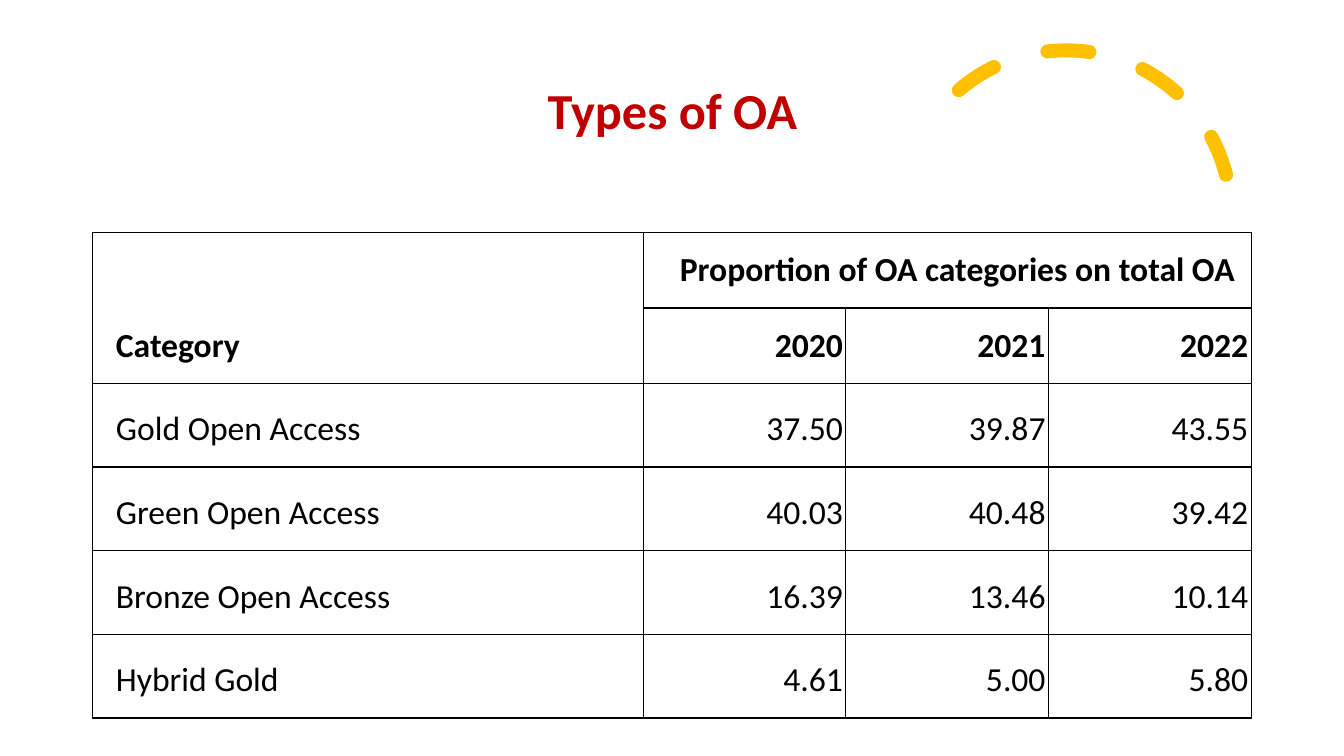
from dataclasses import dataclass

from lxml import etree
from pptx import Presentation
from pptx.dml.color import RGBColor
from pptx.enum.dml import MSO_LINE
from pptx.enum.shapes import MSO_SHAPE
from pptx.enum.text import MSO_ANCHOR, PP_ALIGN
from pptx.oxml.ns import qn
from pptx.util import Pt

PX = 9144  # 100 px to the inch
FONT = "Calibri"
RED = RGBColor(0xC0, 0x00, 0x00)
AMBER = RGBColor(0xFF, 0xC0, 0x00)
BLACK = RGBColor(0x00, 0x00, 0x00)
LEFT, CENTER, RIGHT = PP_ALIGN.LEFT, PP_ALIGN.CENTER, PP_ALIGN.RIGHT
MIDDLE, BOTTOM = MSO_ANCHOR.MIDDLE, MSO_ANCHOR.BOTTOM
DASH, ARC = MSO_LINE.DASH, MSO_SHAPE.ARC


@dataclass(frozen=True)
class Box:
    left: int
    top: int
    width: int
    height: int

    def emu(self) -> tuple[int, ...]:
        return tuple(v * PX for v in (self.left, self.top, self.width, self.height))


@dataclass(frozen=True)
class Category:
    name: str
    shares: tuple[str, str, str]


TITLE_BOX = Box(92, 40, 1150, 145)
ARC_BOX = Box(894, 50, 327, 327)
TABLE_BOX = Box(92, 231, 1150, 481)
COL_WIDTHS = (546, 201, 201, 201)
HEAD_HEIGHT, ROW_HEIGHT = 41, 83
YEARS = ("2020", "2021", "2022")
CATEGORIES = (
    Category("Gold Open Access", ("37.50", "39.87", "43.55")),
    Category("Green Open Access", ("40.03", "40.48", "39.42")),
    Category("Bronze Open Access", ("16.39", "13.46", "10.14")),
    Category("Hybrid Gold", ("4.61", "5.00", "5.80")),
)


def write(tf, text: str, size: int, color: RGBColor, bold: bool, align) -> None:
    tf.text = text
    p = tf.paragraphs[0]
    p.alignment = align
    font = p.runs[0].font
    font.name, font.size, font.bold = FONT, Pt(size), bold
    font.color.rgb = color


def style_cell(cell) -> None:
    """Bottom-anchored, unfilled cell with thin black borders."""
    cell.vertical_anchor = BOTTOM
    cell.margin_left, cell.margin_right = 23 * PX, 3 * PX
    cell.margin_top = cell.margin_bottom = 17 * PX
    tc_pr = cell._tc.get_or_add_tcPr()
    for side in ("lnL", "lnR", "lnT", "lnB"):
        ln = etree.SubElement(tc_pr, qn(f"a:{side}"), w=str(Pt(1)))
        fill = etree.SubElement(ln, qn("a:solidFill"))
        etree.SubElement(fill, qn("a:srgbClr"), val=str(BLACK))
    cell.fill.background()


def add_title(slide) -> None:
    sp = slide.shapes.title
    sp.left, sp.top, sp.width, sp.height = TITLE_BOX.emu()
    tf = sp.text_frame
    tf.vertical_anchor = MIDDLE
    write(tf, "Types of OA", 36, RED, True, CENTER)
    tf.paragraphs[0].line_spacing = 0.9


def add_dashed_arc(slide) -> None:
    sp = slide.shapes.add_shape(ARC, *ARC_BOX.emu())
    sp.shadow.inherit = False
    sp.rotation = 345.8
    sp.adjustments[0], sp.adjustments[1] = 146.13, 0
    sp.fill.background()
    sp.line.color.rgb = AMBER
    sp.line.width = Pt(10)
    sp.line.dash_style = DASH
    sp.line._ln.set("cap", "rnd")


def add_oa_table(slide) -> None:
    row_count = 2 + len(CATEGORIES)
    table = slide.shapes.add_table(row_count, len(COL_WIDTHS), *TABLE_BOX.emu()).table
    table.first_row = table.horz_banding = False
    for column, width in zip(table.columns, COL_WIDTHS):
        column.width = width * PX
    for i, row in enumerate(table.rows):
        row.height = (HEAD_HEIGHT if i < 2 else ROW_HEIGHT) * PX
    for cell in table.iter_cells():
        style_cell(cell)

    # Headings
    table.cell(0, 0).merge(table.cell(1, 0))
    table.cell(0, 1).merge(table.cell(0, 3))
    write(table.cell(0, 0).text_frame, "Category", 24, BLACK, True, LEFT)
    write(table.cell(0, 1).text_frame, "Proportion of OA categories on total OA",
          24, BLACK, True, CENTER)
    for c, year in enumerate(YEARS, 1):
        write(table.cell(1, c).text_frame, year, 24, BLACK, True, RIGHT)

    # Shares
    for r, category in enumerate(CATEGORIES, 2):
        for c, text in enumerate((category.name, *category.shares)):
            write(table.cell(r, c).text_frame, text, 24, BLACK, False,
                  RIGHT if c else LEFT)


def main() -> None:
    prs = Presentation()
    prs.slide_width, prs.slide_height = 1333 * PX, 750 * PX
    slide = prs.slides.add_slide(prs.slide_layouts[5])
    add_title(slide)
    add_dashed_arc(slide)
    add_oa_table(slide)
    prs.save("out.pptx")


if __name__ == "__main__":
    main()
